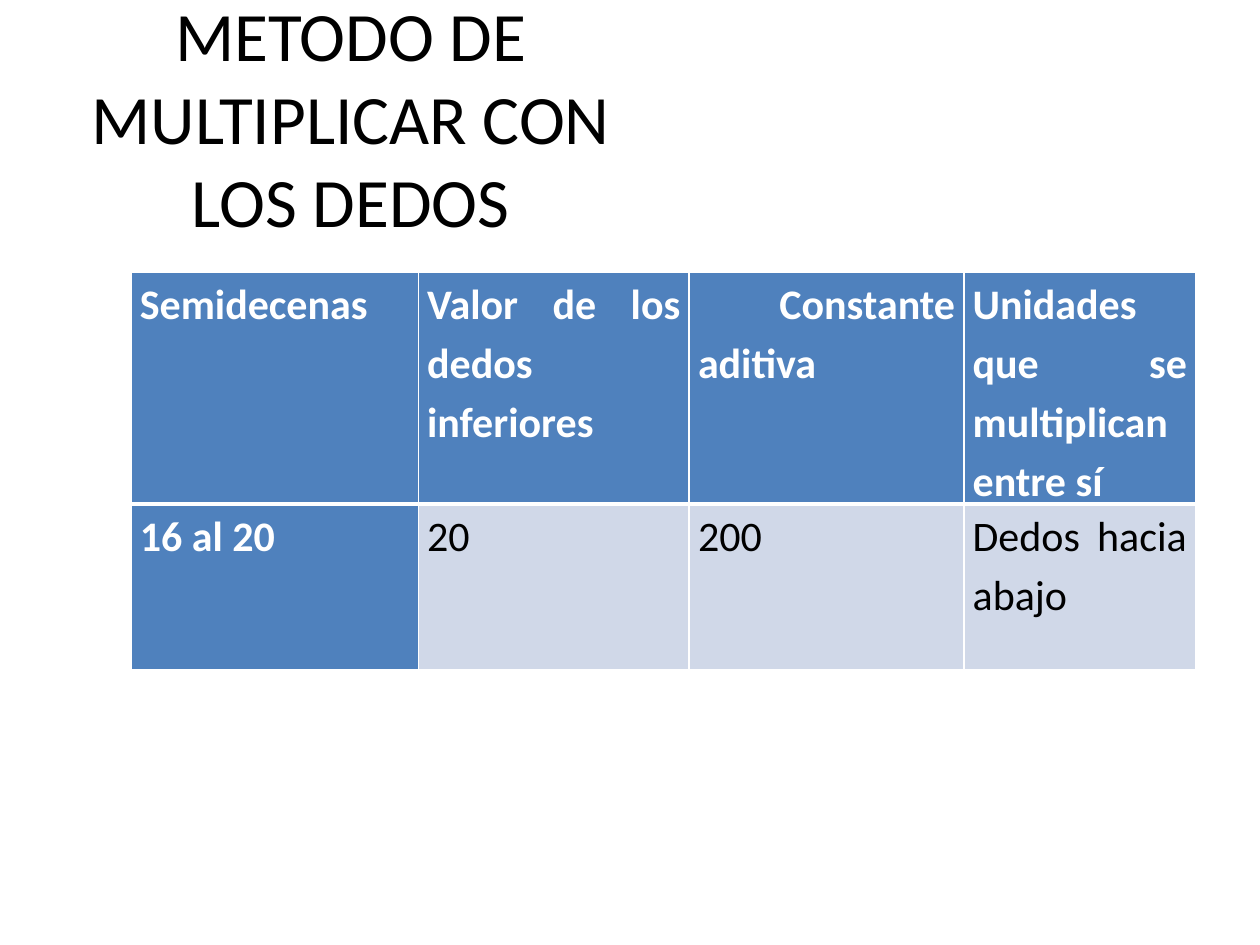
from dataclasses import dataclass

from lxml.etree import SubElement
from pptx import Presentation
from pptx.dml.color import RGBColor
from pptx.enum.text import MSO_ANCHOR as Anchor, PP_ALIGN as Align
from pptx.oxml.ns import qn
from pptx.slide import Slide
from pptx.table import _Cell as Cell
from pptx.text.text import TextFrame as Frame
from pptx.util import Inches, Pt

WHITE = RGBColor(0xFF, 0xFF, 0xFF)
BLACK = RGBColor(0, 0, 0)
BLUE = RGBColor(0x4F, 0x81, 0xBD)
PALE = RGBColor(0xD0, 0xD8, 0xE8)

WIDE, HIGH = Inches(10), Inches(7.5)
COLS = (0.228, 0.215, 0.218, 0.184)
ROWS = (0.245, 0.175)
THIN, THICK = Pt(1), Pt(3)


@dataclass(frozen=True)
class Look:
    """Fill and font of a kind of table cell."""

    fill: RGBColor
    ink: RGBColor
    bold: bool


HEAD = Look(BLUE, WHITE, True)
BODY = Look(PALE, BLACK, False)
GRID = (
    ("Semidecenas", "Valor de los dedos inferiores", " Constante aditiva",
     "Unidades que se multiplican entre sí"),
    ("16 al 20", "20", "200", "Dedos hacia abajo"),
)


def put(frame: Frame, text: str, *, size: float, ink: RGBColor,
        bold: bool = False, align: Align = Align.CENTER, lead: float = 1.0) -> None:
    """Write one formatted paragraph into a frame."""
    frame.word_wrap = True
    para = frame.paragraphs[0]
    para.text = text
    para.alignment = align
    para.line_spacing = lead
    font = para.runs[0].font
    font.name, font.size, font.bold = "Calibri", Pt(size), bold
    font.color.rgb = ink


def edge(cell: Cell, side: str, width: int) -> None:
    """Draw a white border on one side of a cell."""
    line = SubElement(cell._tc.get_or_add_tcPr(), qn(f"a:ln{side}"), w=str(width))
    fill = SubElement(line, qn("a:solidFill"))
    SubElement(fill, qn("a:srgbClr"), val=str(WHITE))


def draw_cell(cell: Cell, text: str, look: Look, top: int, base: int) -> None:
    """Fill, border and label a table cell."""
    for side, width in zip("LRTB", (THIN, THIN, top, base)):
        edge(cell, side, width)
    cell.fill.solid()
    cell.fill.fore_color.rgb = look.fill
    cell.margin_left = cell.margin_right = Inches(0.07)
    cell.margin_top = cell.margin_bottom = 0
    put(cell.text_frame, text, size=24, ink=look.ink, bold=look.bold,
        align=Align.JUSTIFY, lead=1.15)


def draw_table(slide: Slide) -> None:
    """Place the table of values."""
    table = slide.shapes.add_table(
        len(ROWS), len(COLS), int(WIDE * 0.104), int(HIGH * 0.288),
        int(WIDE * sum(COLS)), int(HIGH * sum(ROWS))).table
    for col, share in zip(table.columns, COLS):
        col.width = int(WIDE * share)
    for row, share in zip(table.rows, ROWS):
        row.height = int(HIGH * share)
    for r, texts in enumerate(GRID):
        top, base = (THICK, THIN) if r else (THIN, THICK)
        for c, text in enumerate(texts):
            look = BODY if r and c else HEAD
            draw_cell(table.cell(r, c), text, look, top, base)


def draw_title(slide: Slide) -> None:
    """Place the slide title."""
    box = slide.shapes.add_textbox(
        int(WIDE * 0.05), int(HIGH * 0.04), int(WIDE * 0.457), int(HIGH / 6))
    box.text_frame.vertical_anchor = Anchor.MIDDLE
    put(box.text_frame, "METODO DE MULTIPLICAR CON LOS DEDOS", size=39.6, ink=BLACK)


def main() -> None:
    """Build and save the slide."""
    deck = Presentation()
    deck.slide_width, deck.slide_height = WIDE, HIGH
    slide = deck.slides.add_slide(deck.slide_layouts[6])
    draw_title(slide)
    draw_table(slide)
    deck.save("out.pptx")


if __name__ == "__main__":
    main()
